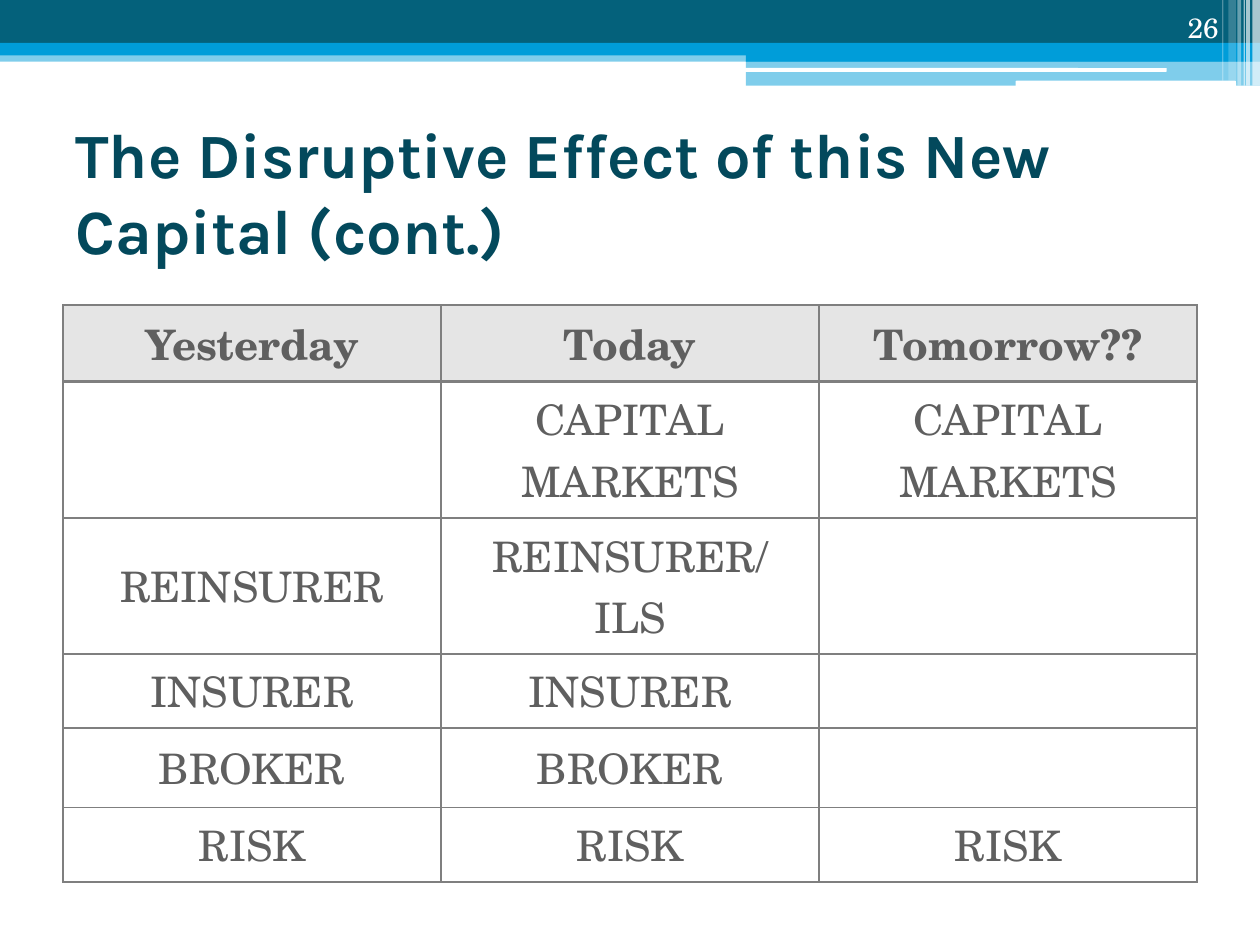
from lxml import etree
from pptx import Presentation
from pptx.dml.color import RGBColor
from pptx.enum.shapes import MSO_SHAPE as Shape
from pptx.enum.text import MSO_ANCHOR as Anchor, PP_ALIGN as Align
from pptx.oxml.ns import qn
from pptx.util import Inches, Pt

WHITE = RGBColor(0xFF, 0xFF, 0xFF)
TEAL = RGBColor(0x04, 0x61, 0x7B)
BLUE = RGBColor(0x00, 0x9D, 0xD9)
TITLE_COLOR = RGBColor(0x03, 0x49, 0x5C)
TEXT_GRAY = RGBColor(0x5F, 0x5F, 0x5F)
HEADER_GRAY = RGBColor(0xE5, 0xE5, 0xE5)
BORDER_GRAY = RGBColor(0x7F, 0x7F, 0x7F)
HEADING_FONT = "Karla"
BODY_FONT = "TeX Gyre Schola"

# left, top, width, height, color, opacity in percent
BANDS = [
    (0, 0.4, 10, 0.09, BLUE, 50),
    (0, 0, 10, 0.34, TEAL, 100),
    (0, 0.34, 10, 0.1, BLUE, 100),
    (5.92, 0.39, 4.08, 0.1, BLUE, 100),
    (5.92, 0.48, 4.08, 0.2, BLUE, 50),
]
WHITE_BARS = [(5.91, 0.54, 3.35, 0.03), (8.06, 0.64, 1.75, 0.05)]
# left, width, height, opacity in percent
STRIPES = [
    (9.94, 0.06, 0.68, 65), (9.89, 0.03, 0.68, 65), (9.87, 0.01, 0.68, 60),
    (9.82, 0.03, 0.68, 40), (9.75, 0.06, 0.64, 20), (9.7, 0.01, 0.64, 30),
]
ROWS = [
    ("Yesterday", "Today", "Tomorrow??"),
    ("", "CAPITAL MARKETS", "CAPITAL MARKETS"),
    ("REINSURER", "REINSURER/ ILS", ""),
    ("INSURER", "INSURER", ""),
    ("BROKER", "BROKER", ""),
    ("RISK", "RISK", "RISK"),
]
ROW_HEIGHTS = [0.61, 1.08, 1.08, 0.59, 0.63, 0.59]


def write_text(frame, text, *, size, color, font=BODY_FONT, bold=False, align=Align.LEFT):
    paragraph = frame.paragraphs[0]
    paragraph.alignment = align
    run = paragraph.add_run()
    run.text = text
    run.font.name = font
    run.font.size = Pt(size)
    run.font.bold = bold
    run.font.color.rgb = color


def add_text_box(slide, box, text, anchor, **text_format):
    frame = slide.shapes.add_textbox(*map(Inches, box)).text_frame
    frame.word_wrap = True
    frame.vertical_anchor = anchor
    write_text(frame, text, **text_format)


def add_block(slide, box, color, opacity=100, kind=Shape.RECTANGLE):
    shape = slide.shapes.add_shape(kind, *map(Inches, box))
    shape.shadow.inherit = False
    shape.line.fill.background()
    shape.fill.solid()
    shape.fill.fore_color.rgb = color
    if opacity < 100:
        fill_color = shape.fill._xPr.find(qn("a:solidFill"))[0]
        etree.SubElement(fill_color, qn("a:alpha"), val=str(opacity * 1000))


def set_border(cell, side, width):
    properties = cell._tc.get_or_add_tcPr()
    line = etree.Element(qn(f"a:ln{side}"), w=str(Pt(width)))
    fill = etree.SubElement(line, qn("a:solidFill"))
    etree.SubElement(fill, qn("a:srgbClr"), val=str(BORDER_GRAY))
    # Borders come before the cell fill
    properties.insert(len(properties) - 1, line)


def add_banner(slide, left, top):
    for x, y, width, height, color, opacity in BANDS:
        add_block(slide, (left + x, top + y, width, height), color, opacity)
    for x, y, width, height in WHITE_BARS:
        add_block(slide, (left + x, top + y, width, height), WHITE,
                  kind=Shape.ROUNDED_RECTANGLE)
    for x, width, height, opacity in STRIPES:
        add_block(slide, (left + x, top, width, height), WHITE, opacity)


def add_chain_table(slide, left, top, width):
    frame = slide.shapes.add_table(len(ROWS), len(ROWS[0]), Inches(left), Inches(top),
                                   Inches(width), Inches(sum(ROW_HEIGHTS)))
    table = frame.table
    for column in table.columns:
        column.width = Inches(width / len(ROWS[0]))
    for index, (texts, height) in enumerate(zip(ROWS, ROW_HEIGHTS)):
        header = index == 0
        table.rows[index].height = Inches(height)
        for cell, text in zip(table.rows[index].cells, texts):
            cell.fill.solid()
            cell.fill.fore_color.rgb = HEADER_GRAY if header else WHITE
            cell.vertical_anchor = Anchor.MIDDLE
            cell.margin_left = cell.margin_right = Inches(0.11)
            cell.margin_top = cell.margin_bottom = Inches(0.05)
            borders = {"L": 1, "R": 1, "T": 2 if index == 1 else 1, "B": 2 if header else 1}
            for side, line_width in borders.items():
                set_border(cell, side, line_width)
            if text:
                write_text(cell.text_frame, text, size=24, color=TEXT_GRAY,
                           bold=header, align=Align.CENTER)


def main():
    presentation = Presentation()
    presentation.slide_width = Inches(10)
    presentation.slide_height = Inches(7.5)
    slide = presentation.slides.add_slide(presentation.slide_layouts[6])

    # Banner across the top
    add_banner(slide, 0, 0)
    # Title
    add_text_box(slide, (0.5, 0.92, 9, 1.2),
                 "The Disruptive Effect of this New Capital (cont.)", Anchor.MIDDLE,
                 size=36, color=TITLE_COLOR, font=HEADING_FONT, bold=True)
    # Risk chain over time
    add_chain_table(slide, 0.5, 2.42, 9)
    # Slide number
    add_text_box(slide, (8.94, 0, 0.83, 0.4), "26", Anchor.BOTTOM,
                 size=16, color=WHITE, align=Align.RIGHT)

    presentation.save("out.pptx")


if __name__ == "__main__":
    main()
